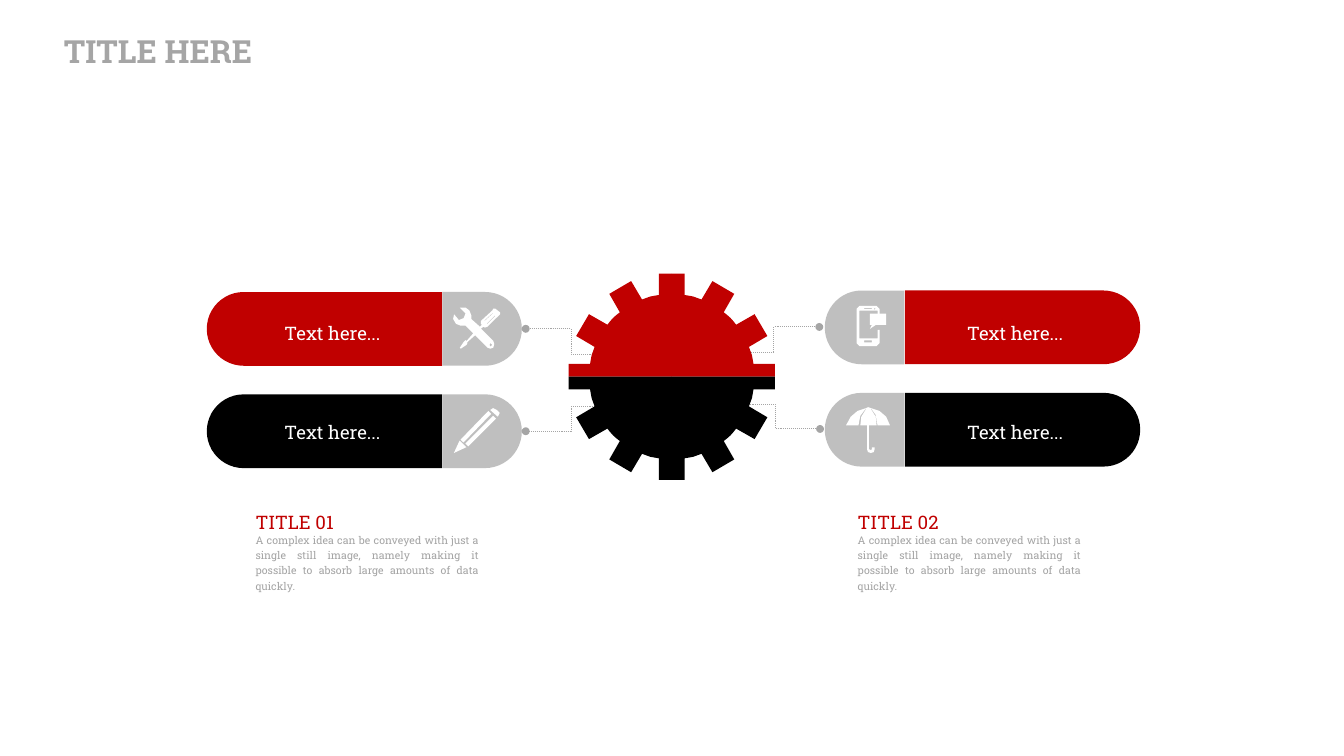
import math
from dataclasses import dataclass

from lxml import etree
from pptx import Presentation
from pptx import util as u
from pptx.dml.color import RGBColor
from pptx.enum import dml, shapes, text
from pptx.oxml.ns import qn


@dataclass(frozen=True)
class Theme:
    font: str = "Roboto Slab"
    red: str = "C00000"
    black: str = "000000"
    silver: str = "BFBFBF"
    grey: str = "A5A5A5"
    white: str = "FFFFFF"
    title: int = 24
    label: int = 14
    body: int = 8


ICON_UNIT = u.Cm(2.54) / 100
TOOLS = [[
    [(49, 6), (44, 2), (42, 2), (41, 4), (29, 15), (29, 18), (30, 19), (28, 21), (19, 13),
     (19, 9), (17, 4), (13, 1), (7, 1), (13, 7), (11, 12), (6, 14), (1, 8), (0, 13), (3, 18),
     (8, 20), (13, 20), (21, 28), (14, 36), (13, 35), (11, 37), (7, 43), (8, 44), (14, 40),
     (15, 38), (15, 37), (23, 30), (36, 43), (39, 44), (42, 43), (43, 39), (42, 36),
     (29, 23), (32, 21), (33, 22), (36, 21), (47, 10), (49, 8)],
    [(39, 38), (41, 40), (39, 42), (38, 40)],
    [(33, 15), (32, 15), (41, 7), (42, 7)],
    [(36, 18), (35, 18), (44, 9), (44, 10)],
]]
PENCIL = [
    [[(6, 35), (0, 48), (13, 42)]],
    [[(36, 4), (7, 34), (10, 37), (39, 7)]],
    [[(41, 9), (12, 38), (15, 41), (44, 12)]],
    [[(38, 3), (41, 1), (45, 3), (48, 6), (46, 10)]],
]
PHONE = [
    [[(22, 34), (3, 34), (3, 5), (22, 5), (22, 11), (24, 11), (24, 3), (21, 0), (3, 0),
      (0, 3), (0, 39), (3, 42), (21, 42), (24, 39), (24, 25), (22, 25)],
     [(19, 2), (20, 3), (19, 4), (18, 3)],
     [(8, 2), (16, 2), (16, 3), (8, 3)],
     [(16, 38), (8, 38), (8, 36), (16, 36)]],
    [[(14, 20), (16, 20), (14, 24), (20, 20), (31, 20), (31, 8), (14, 8)]],
]
UMBRELLA = [[
    [(33, 19), (46, 19), (42, 10), (35, 4), (26, 1), (23, 0), (21, 1), (12, 4), (5, 10),
     (0, 19), (13, 19), (15, 9), (21, 1), (21, 2), (16, 10), (15, 19), (22, 19), (22, 44),
     (23, 47), (26, 48), (29, 47), (30, 44), (30, 42), (27, 42), (27, 44), (26, 45),
     (24, 44), (24, 19), (32, 19), (31, 10), (26, 2), (26, 1), (31, 8)],
]]


def gear_quarter(tip=2.74, root=2.2, half_tooth=0.34):
    base = math.sqrt(root ** 2 - half_tooth ** 2)
    edge = math.degrees(math.asin(half_tooth / root))
    outline = [(0, 0)]
    for angle in range(0, 91, 30):
        turn = math.radians(angle)
        tooth = [(-half_tooth, base), (-half_tooth, tip), (half_tooth, tip), (half_tooth, base)]
        outline += [(max(0, x * math.cos(turn) + y * math.sin(turn)),
                     max(0, y * math.cos(turn) - x * math.sin(turn))) for x, y in tooth]
        if angle < 90:
            for step in (0.25, 0.5, 0.75):
                valley = math.radians(angle + edge + step * (30 - 2 * edge))
                outline.append((root * math.sin(valley), root * math.cos(valley)))
    return outline


class Infographic:
    def __init__(self, slide, theme):
        self.slide = slide
        self.theme = theme

    def paint(self, shape, color):
        shape.shadow.inherit = False
        shape.fill.solid()
        shape.fill.fore_color.rgb = RGBColor.from_string(color)
        shape.line.fill.background()

    def set_words(self, box, words, size, color, align, spacing=None, bold=False):
        box.text_frame.text = words
        paragraph = box.text_frame.paragraphs[0]
        paragraph.alignment = align
        paragraph.line_spacing = spacing
        font = paragraph.font
        font.name, font.size, font.bold = self.theme.font, u.Pt(size), bold
        font.color.rgb = RGBColor.from_string(color)

    def clear_margins(self, frame):
        frame.margin_left = frame.margin_right = frame.margin_top = frame.margin_bottom = 0

    def title(self, words):
        heading = self.slide.shapes.title
        heading.left, heading.top = u.Cm(1.7), u.Cm(0.84)
        heading.width, heading.height = u.Cm(7.34), u.Cm(1.02)
        self.clear_margins(heading.text_frame)
        heading.text_frame.vertical_anchor = text.MSO_ANCHOR.MIDDLE
        heading.text_frame.auto_size = text.MSO_AUTO_SIZE.NONE
        self.set_words(heading, words, self.theme.title, self.theme.grey,
                       text.PP_ALIGN.LEFT, bold=True)

    def text_box(self, left, top, width, height):
        box = self.slide.shapes.add_textbox(u.Cm(left), u.Cm(top), u.Cm(width), u.Cm(height))
        box.text_frame.word_wrap = True
        box.text_frame.auto_size = text.MSO_AUTO_SIZE.SHAPE_TO_FIT_TEXT
        return box

    def label(self, left, top, words):
        self.set_words(self.text_box(left, top, 4.11, 0.86), words, self.theme.label,
                       self.theme.white, text.PP_ALIGN.CENTER)

    def note(self, left, top, width, height, words, size, color):
        box = self.text_box(left, top, width, height)
        self.clear_margins(box.text_frame)
        self.set_words(box, words, size, color, text.PP_ALIGN.JUSTIFY, 1.2)

    def half_pill(self, center, middle, length, rotation, color):
        breadth = 1.96
        half = self.slide.shapes.add_shape(
            shapes.MSO_SHAPE.ROUND_2_SAME_RECTANGLE, u.Cm(center - breadth / 2),
            u.Cm(middle - length / 2), u.Cm(breadth), u.Cm(length))
        half.adjustments[0], half.adjustments[1] = 0.5, 0
        half.rotation = rotation
        self.paint(half, color)

    def link(self, start, end):
        link = self.slide.shapes.add_connector(
            shapes.MSO_CONNECTOR.ELBOW, *(u.Cm(value) for value in start + end))
        link.line.color.rgb = RGBColor.from_string(self.theme.grey)
        link.line.width = u.Pt(0.75)
        link.line.dash_style = dml.MSO_LINE.ROUND_DOT
        properties = link._element.spPr
        for tag in ("a:headEnd", "a:tailEnd"):
            etree.SubElement(properties.find(qn("a:ln")), qn(tag)).set("type", "oval")
        etree.SubElement(properties, qn("a:effectLst"))

    def outline(self, left, top, contours, unit, color):
        first, *others = contours
        builder = self.slide.shapes.build_freeform(*first[0], scale=unit)
        builder.add_line_segments(first[1:])
        for contour in others:
            builder.move_to(*contour[0])
            builder.add_line_segments(contour[1:])
        self.paint(builder.convert_to_shape(u.Cm(left), u.Cm(top)), color)

    def gear(self, center, middle):
        quarter = gear_quarter()
        for down, color in ((-1, self.theme.red), (1, self.theme.black)):
            for across in (-1, 1):
                points = [(round(across * x * 100), round(down * y * 100)) for x, y in quarter]
                self.outline(center, middle, [points], u.Cm(0.01), color)

    def icon(self, left, top, parts):
        for contours in parts:
            self.outline(left, top, contours, ICON_UNIT, self.theme.white)


def main():
    theme = Theme()
    presentation = Presentation()
    presentation.slide_width, presentation.slide_height = u.Cm(35.71), u.Cm(20.09)
    slide = presentation.slides.add_slide(presentation.slide_layouts[5])
    page = Infographic(slide, theme)
    page.title("TITLE HERE")

    for start, end in (((19.41, 10.74), (21.79, 11.4)), ((19.35, 9.37), (21.77, 8.69)),
                       ((16.38, 10.8), (13.97, 11.46)), ((16.38, 9.42), (13.97, 8.74))):
        page.link(start, end)

    row_pitch = 2.72
    for label_center, icon_center, top_row, outward in ((27.17, 22.97, 8.7, 90),
                                                        (8.62, 12.81, 8.74, 270)):
        for row, color in enumerate((theme.red, theme.black)):
            middle = top_row + row * row_pitch
            page.half_pill(label_center, middle, 6.25, outward, color)
            page.half_pill(icon_center, middle, 2.11, 360 - outward, theme.silver)

    page.gear(17.85, 10.01)

    for left, top, parts in ((12.04, 8.15, TOOLS), (12.06, 10.82, PENCIL),
                             (22.76, 8.13, PHONE), (22.48, 10.82, UMBRELLA)):
        page.icon(left, top, parts)

    for left in (6.78, 24.92):
        for top in (8.44, 11.07):
            page.label(left, top, "Text here...")

    idea = ("A complex idea can be conveyed with just a single still image, namely making it "
            "possible to absorb large amounts of data quickly.")
    for left, heading in ((6.79, "TITLE 01"), (22.79, "TITLE 02")):
        page.note(left, 13.46, 4.9, 0.71, heading, theme.label, theme.red)
        page.note(left, 14.12, 5.94, 1.22, idea, theme.body, theme.grey)

    presentation.save("out.pptx")


if __name__ == "__main__":
    main()
